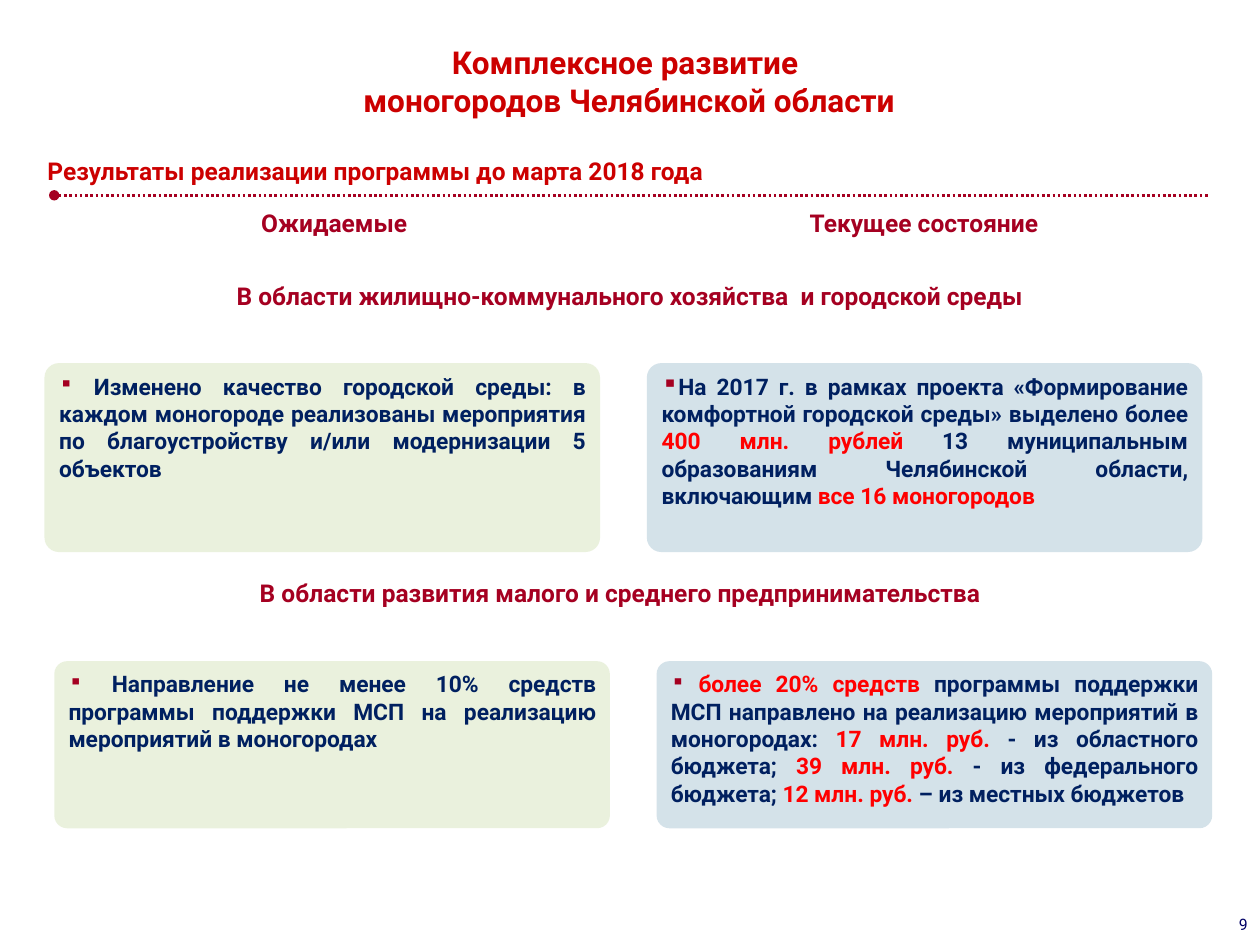
from lxml import etree
from pptx import Presentation
from pptx.dml.color import RGBColor
from pptx.enum.dml import MSO_LINE
from pptx.enum.shapes import MSO_CONNECTOR, MSO_SHAPE
from pptx.enum.text import MSO_ANCHOR, PP_ALIGN
from pptx.oxml.ns import qn
from pptx.util import Pt

LEFT, CENTER, RIGHT, JUSTIFY = PP_ALIGN.LEFT, PP_ALIGN.CENTER, PP_ALIGN.RIGHT, PP_ALIGN.JUSTIFY
TOP = MSO_ANCHOR.TOP
STRAIGHT = MSO_CONNECTOR.STRAIGHT
ROUNDED = MSO_SHAPE.ROUNDED_RECTANGLE
DOTTED = MSO_LINE.ROUND_DOT
FONT = "Roboto"
COLORS = {
    "title": "CC0000", "heading": "A50021", "body": "002060", "accent": "FF0000",
    "number": "000066", "expected": "D7E4BD", "current": "ABC6D5",
}
CARD_WIDTH, COLUMN_PITCH = 317.5, 344.2


def color(name):
    """Return the named colour."""
    return RGBColor.from_string(COLORS[name])


def format_span(span, size, color_name, bold=True):
    """Set the font of one run."""
    for key, value in {"name": FONT, "size": Pt(size), "bold": bold}.items():
        setattr(span.font, key, value)
    span.font.color.rgb = color(color_name)


def add_label(slide, text, place, size, color_name, align=CENTER, bold=True):
    """Add a text box holding one uniform paragraph."""
    box = slide.shapes.add_textbox(*map(Pt, place))
    box.text_frame.word_wrap = True
    para = box.text_frame.paragraphs[0]
    para.text = text
    para.alignment = align
    for span in para.runs:
        format_span(span, size, color_name, bold)


def add_bullet(para):
    """Give a paragraph a dark red square bullet."""
    properties = para._p.get_or_add_pPr()
    properties.set("marL", "0")
    properties.set("indent", "0")
    bullet_color = etree.SubElement(properties, qn("a:buClr"))
    etree.SubElement(bullet_color, qn("a:srgbClr"), val=COLORS["heading"])
    etree.SubElement(properties, qn("a:buChar"), char="▪")


def add_card(slide, place, fill_name, spans):
    """Add a translucent rounded card with a justified bullet paragraph."""
    card = slide.shapes.add_shape(ROUNDED, *map(Pt, place))
    card.adjustments[0] = 0.077
    card.shadow.inherit = False
    card.line.fill.background()
    card.fill.solid()
    card.fill.fore_color.rgb = color(fill_name)
    fill_color = card._element.spPr.find(qn("a:solidFill"))[0]
    etree.SubElement(fill_color, qn("a:alpha"), val="50000")
    frame = card.text_frame
    layout = {
        "word_wrap": True, "vertical_anchor": TOP,
        "margin_left": Pt(6), "margin_right": Pt(6),
        "margin_top": Pt(3), "margin_bottom": Pt(3),
    }
    for key, value in layout.items():
        setattr(frame, key, value)
    para = frame.paragraphs[0]
    para.alignment = JUSTIFY
    add_bullet(para)
    for text, color_name in spans:
        span = para.add_run()
        span.text = text
        format_span(span, 13 if text.strip() else 11, color_name)


def add_card_row(slide, left, top, height, expected, current):
    """Add an expected card and a current card side by side."""
    add_card(slide, (left, top, CARD_WIDTH, height), "expected", expected)
    add_card(slide, (left + COLUMN_PITCH, top, CARD_WIDTH, height), "current", current)


def add_rule(slide, left, right, top):
    """Add a dotted line that starts with a round dot."""
    rule = slide.shapes.add_connector(STRAIGHT, Pt(left), Pt(top), Pt(right), Pt(top))
    rule.line.color.rgb = color("heading")
    rule.line.width = Pt(1.5)
    rule.line.dash_style = DOTTED
    etree.SubElement(rule.line._get_or_add_ln(), qn("a:headEnd"), type="oval")
    etree.SubElement(rule._element.spPr, qn("a:effectLst"))


def main():
    """Build the slide and save the deck."""
    deck = Presentation()
    deck.slide_width, deck.slide_height = Pt(720), Pt(540)
    slide = deck.slides.add_slide(deck.slide_layouts[6])

    add_label(slide, "Комплексное развитие \vмоногородов Челябинской области",
              (110, 21, 499, 51), 18, "title")
    add_label(slide, "Результаты реализации программы до марта 2018 года",
              (20, 85.7, 454, 24.5), 14, "title", LEFT)
    add_rule(slide, 31, 691, 111.6)
    headings = [
        ("Ожидаемые", (83.5, 115.5, 215, 24.5)),
        ("Текущее состояние", (420.5, 115.5, 215, 24.5)),
        ("В области жилищно-коммунального хозяйства  и городской среды",
         (60, 157, 600, 24.5)),
        ("В области развития малого и среднего предпринимательства",
         (105, 327, 499, 24.5)),
    ]
    for text, place in headings:
        add_label(slide, text, place, 14, "heading")

    add_card_row(
        slide, 25.4, 207.5, 108,
        [(" ", "body"),
         ("Изменено качество городской среды: в каждом моногороде реализованы "
          "мероприятия по благоустройству и/или модернизации 5 объектов", "body")],
        [("На 2017 г. в рамках проекта «Формирование комфортной городской среды» "
          "выделено более ", "body"),
         ("400 млн. рублей ", "accent"),
         ("13 муниципальным образованиям Челябинской области, включающим ", "body"),
         ("все 16 моногородов", "accent")])
    add_card_row(
        slide, 31, 377.8, 95.5,
        [(" ", "body"),
         ("Направление не менее 10% средств программы поддержки МСП на реализацию "
          "мероприятий в моногородах", "body")],
        [(" ", "accent"),
         ("более 20% средств ", "accent"),
         ("программы поддержки МСП направлено на реализацию мероприятий "
          "в моногородах: ", "body"),
         ("17 млн. руб. ", "accent"),
         ("- из областного бюджета; ", "body"),
         ("39 млн. руб. ", "accent"),
         ("- из федерального бюджета; ", "body"),
         ("12 млн. руб. ", "accent"),
         ("– из местных бюджетов", "body")])
    add_label(slide, "9", (677.5, 519, 42.5, 18), 9, "number", RIGHT, False)
    deck.save("out.pptx")


if __name__ == "__main__":
    main()
